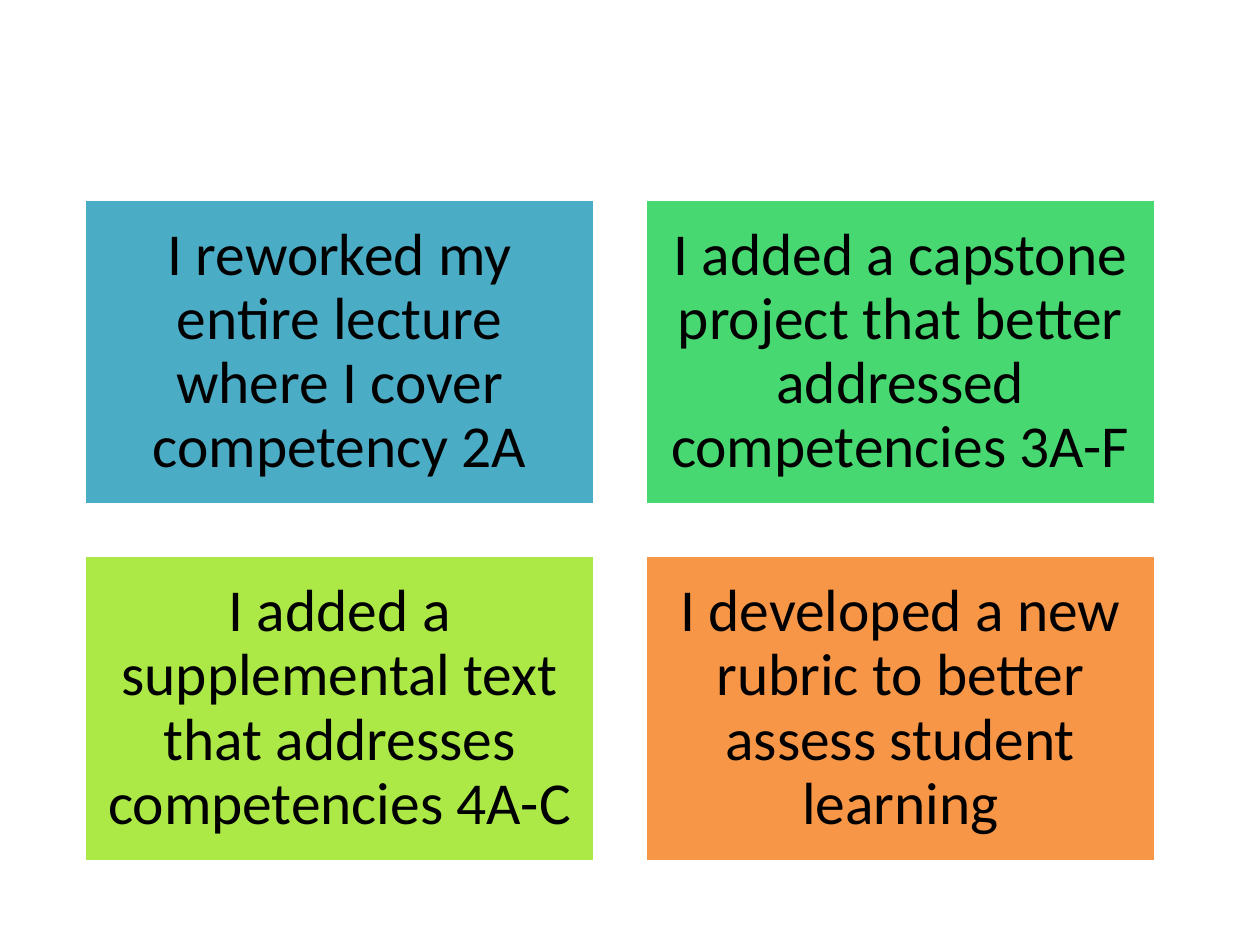
from pptx import Presentation
from pptx.dml.color import RGBColor
from pptx.enum.shapes import MSO_SHAPE
from pptx.enum.text import MSO_ANCHOR, PP_ALIGN
from pptx.util import Inches, Pt

COLORS = {
    "blue": "4BACC6",
    "green": "47D872",
    "lime": "ACE946",
    "orange": "F79646",
    "white": "FFFFFF",
    "black": "000000",
}
CARDS = [
    ("I reworked my entire lecture where I cover competency 2A", "blue"),
    ("I added a capstone project that better addressed competencies 3A-F", "green"),
    ("I added a supplemental text that addresses competencies 4A-C", "lime"),
    ("I developed a new rubric to better assess student learning", "orange"),
]
LEFT, TOP = 0.67, 1.58
WIDTH, HEIGHT = 4.05, 2.43
GAP = 0.4
COLUMNS = 2


def write_text(box, text, size=34, color="black", font="Calibri", inset=0.14):
    frame = box.text_frame
    frame.word_wrap = True
    frame.vertical_anchor = MSO_ANCHOR.MIDDLE
    frame.margin_left = frame.margin_right = Inches(inset)
    frame.margin_top = frame.margin_bottom = Inches(inset)
    para = frame.paragraphs[0]
    para.alignment = PP_ALIGN.CENTER
    para.line_spacing = 0.9
    span = para.add_run()
    span.text = text
    span.font.name = font
    span.font.size = Pt(size)
    span.font.color.rgb = RGBColor.from_string(COLORS[color])


deck = Presentation()
deck.slide_width = Inches(10)
deck.slide_height = Inches(7.5)
page = deck.slides.add_slide(deck.slide_layouts[6])

for index, (text, color) in enumerate(CARDS):
    row, column = divmod(index, COLUMNS)
    card = page.shapes.add_shape(
        MSO_SHAPE.RECTANGLE,
        Inches(LEFT + column * (WIDTH + GAP)),
        Inches(TOP + row * (HEIGHT + GAP)),
        Inches(WIDTH),
        Inches(HEIGHT),
    )
    card.shadow.inherit = False
    card.fill.solid()
    card.fill.fore_color.rgb = RGBColor.from_string(COLORS[color])
    card.line.color.rgb = RGBColor.from_string(COLORS["white"])
    card.line.width = Pt(2)
    write_text(card, text)

deck.save("out.pptx")
